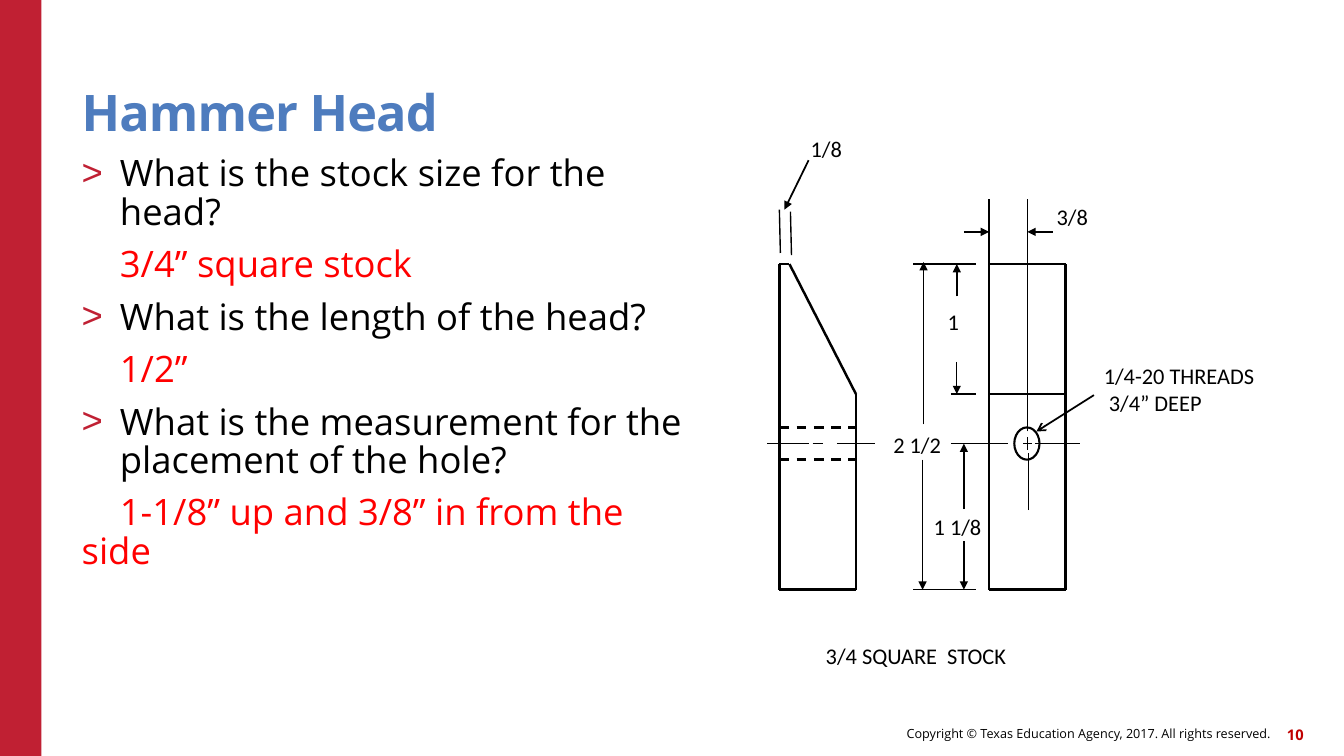
from dataclasses import dataclass

from lxml.etree import SubElement
from pptx import Presentation
from pptx.dml.color import RGBColor
from pptx.enum.dml import MSO_LINE_DASH_STYLE as Dash
from pptx.enum.shapes import MSO_CONNECTOR as Link, MSO_SHAPE as Shape
from pptx.enum.text import MSO_ANCHOR as Anchor, MSO_AUTO_SIZE as Fit, PP_ALIGN as Align
from pptx.oxml.ns import qn
from pptx.util import Pt

BLACK = RGBColor(0x00, 0x00, 0x00)
RED = RGBColor(0xFF, 0x00, 0x00)
CRIMSON = RGBColor(0xC0, 0x20, 0x33)
MAROON = RGBColor(0xC0, 0x00, 0x00)
BLUE = RGBColor(0x4E, 0x7C, 0xBE)
SANS = "Open Sans"
HAND = "Calibri"
SCALE = 9144  # EMU in a px, 100 px to the inch
INDENT = 38


@dataclass(frozen=True)
class Pen:
    width: float
    dash: bool = False
    head: str = ""


@dataclass(frozen=True)
class Label:
    x: int
    y: int
    w: int
    h: int
    text: str


@dataclass(frozen=True)
class Item:
    ask: str
    reply: str


EDGE = Pen(1.75)
HIDDEN = Pen(1.75, dash=True)
THIN = Pen(1)
ARROW = Pen(1.25, head="triangle")
FINE = Pen(0.75, head="triangle")
LEADER = Pen(1.25, head="arrow")

# Shared levels and sides of the two views
TOP, BEND, HOLE, BASE = 262, 391, 440, 585
LEFT, TIP, BACK = 773, 783, 849
NEAR, MID, FAR = 981, 1019, 1057

STROKES: dict[Pen, list[tuple[int, int, int, int]]] = {
    EDGE: [
        (LEFT, BASE, BACK, BASE), (BACK, BASE, BACK, BEND),
        (LEFT, BASE, LEFT, TOP), (LEFT, TOP, TIP, TOP), (TIP, TOP, BACK, BEND),
        (NEAR, BASE, FAR, BASE), (FAR, BASE, FAR, TOP),
        (NEAR, TOP, FAR, TOP), (NEAR, BASE, NEAR, TOP), (NEAR, BEND, FAR, BEND),
    ],
    HIDDEN: [(LEFT, HOLE + dy, BACK, HOLE + dy) for dy in (-16, 16)],
    THIN: [
        (1015, HOLE, 1024, HOLE), (MID, 446, MID, 434),
        (943, HOLE, 1000, HOLE), (1027, HOLE, 1071, HOLE),
        (806, HOLE, 816, HOLE), (802, HOLE, 761, HOLE), (830, HOLE, 868, HOLE),
        (1020, 506, 1020, 449), (MID, 428, MID, 197), (NEAR, TOP, NEAR, 197),
        (906, BASE, 968, BASE), (906, TOP, 968, TOP), (943, BEND, 968, BEND),
        (774, 251, 773, 208), (785, 253, 784, 210),
    ],
    ARROW: [
        (916, 421, 916, 260), (915, 456, 915, BASE),
        (956, 537, 956, BASE), (956, 505, 956, HOLE),
        (956, 230, NEAR, 230), (1044, 230, MID, 230),
        (949, 294, 949, TOP), (802, 159, 778, 208),
    ],
    FINE: [(949, 359, 949, BEND)],
    LEADER: [(1085, 392, 1028, 428)],
}

LABELS = [
    Label(815, 633, 256, 35, "3/4 SQUARE  STOCK"),
    Label(882, 424, 67, 87, "2 1/2"),
    Label(922, 505, 69, 57, "1 1/8"),
    Label(936, 302, 54, 52, "1"),
    Label(1044, 197, 67, 52, "3/8"),
    Label(800, 130, 67, 52, "1/8"),
]

ITEMS = [
    Item("What is the stock size for the head?", "3/4” square stock"),
    Item("What is the length of the head?", "1/2”"),
    Item("What is the measurement for the placement of the hole?",
         "1-1/8” up and 3/8” in from the side"),
]


def px(n: int) -> int:
    return n * SCALE


def place(shape, x: int, y: int, w: int, h: int) -> None:
    shape.left, shape.top, shape.width, shape.height = map(px, (x, y, w, h))


def setup(frame, inset: int, anchor=Anchor.TOP) -> None:
    frame.word_wrap = True
    frame.auto_size = Fit.NONE
    frame.vertical_anchor = anchor
    frame.margin_left = frame.margin_right = px(inset)
    frame.margin_top = frame.margin_bottom = px(inset)


def write(para, text: str, size: float, color: RGBColor, face: str, bold: bool = False):
    run = para.add_run()
    run.text = text
    font = run.font
    font.size, font.name, font.bold = Pt(size), face, bold
    font.color.rgb = color
    return run


def text_box(slide, spot: Label, inset: int, anchor=Anchor.TOP):
    """Add an empty text box at the label's place and return its first paragraph."""
    box = slide.shapes.add_textbox(*map(px, (spot.x, spot.y, spot.w, spot.h)))
    setup(box.text_frame, inset, anchor)
    return box.text_frame.paragraphs[0]


def bullet(para, mark: str) -> None:
    """Hang the paragraph from a mark, or indent only its first line if none."""
    props = para._p.get_or_add_pPr()
    props.set("marL", str(px(INDENT if mark else 0)))
    props.set("indent", str(px(-INDENT if mark else INDENT)))
    if mark:
        tint = SubElement(props, qn("a:buClr"))
        SubElement(tint, qn("a:srgbClr")).set("val", str(CRIMSON))
        SubElement(props, qn("a:buChar")).set("char", mark)
    else:
        SubElement(props, qn("a:buNone"))


def stroke(slide, pen: Pen, ends: tuple[int, int, int, int]) -> None:
    wire = slide.shapes.add_connector(Link.STRAIGHT, *map(px, ends))
    wire.line.width = Pt(pen.width)
    wire.line.color.rgb = BLACK
    if pen.dash:
        wire.line.dash_style = Dash.DASH
    if pen.head:
        SubElement(wire.line._get_or_add_ln(), qn("a:tailEnd")).set("type", pen.head)
    SubElement(wire._element.spPr, qn("a:effectLst"))


def add_frame(slide) -> None:
    """Add the side band, the copyright line and the page number."""
    band = slide.shapes.add_shape(Shape.RECTANGLE, 0, 0, px(41), px(750))
    band.shadow.inherit = False
    band.fill.solid()
    band.fill.fore_color.rgb = CRIMSON
    band.line.fill.background()
    notice = Label(614, 712, 646, 32,
                   "Copyright © Texas Education Agency, 2017. All rights reserved.")
    number = Label(1251, 713, 42, 32, "10")
    for spot, size, color, bold in ((notice, 9, BLACK, False), (number, 10.5, MAROON, True)):
        para = text_box(slide, spot, 0, Anchor.MIDDLE)
        para.alignment = Align.RIGHT
        write(para, spot.text, size, color, SANS, bold)


def add_words(slide) -> None:
    """Fill the title and the list of questions and answers."""
    title, body = slide.shapes.title, slide.placeholders[1]
    place(title, 81, 45, 1100, 96)
    setup(title.text_frame, 0, Anchor.BOTTOM)
    para = title.text_frame.paragraphs[0]
    para.alignment = Align.LEFT
    para.line_spacing = 0.9
    run = write(para, "Hammer Head", 36, BLUE, SANS, True)
    run._r.get_or_add_rPr().set("spc", "-60")

    place(body, 81, 155, 605, 518)
    frame = body.text_frame
    setup(frame, 0)
    rows = [row for item in ITEMS
            for row in ((item.ask, ">", BLACK), (item.reply, "", RED))]
    for i, (text, mark, color) in enumerate(rows):
        para = frame.add_paragraph() if i else frame.paragraphs[0]
        bullet(para, mark)
        para.line_spacing = 0.88
        para.space_before = Pt(10 if i else 0)
        write(para, text, 26, color, SANS)


def add_plan(slide) -> None:
    """Draw the side and front views with their dimensions."""
    for pen, lines in STROKES.items():
        for ends in lines:
            stroke(slide, pen, ends)
    hole = slide.shapes.add_shape(Shape.OVAL, *map(px, (1006, HOLE - 16, 25, 32)))
    hole.shadow.inherit = False
    hole.fill.background()
    hole.line.color.rgb = BLACK
    hole.line.width = Pt(1.5)
    for spot in LABELS:
        write(text_box(slide, spot, 4), spot.text, 16, BLACK, HAND)
    thread = Label(1085, 354, 214, 75, "1/4-20 THREADS")
    para = text_box(slide, thread, 10)
    para._p.getparent().bodyPr.set("tIns", str(px(5)))
    write(para, thread.text, 16, BLACK, HAND)
    depth = slide.shapes[-1].text_frame.add_paragraph()
    depth._p.get_or_add_pPr().set("marL", str(px(5)))
    write(depth, "3/4” DEEP", 16, BLACK, HAND)


def main() -> None:
    deck = Presentation()
    deck.slide_width, deck.slide_height = px(1333), px(750)
    slide = deck.slides.add_slide(deck.slide_layouts[1])
    add_frame(slide)
    add_words(slide)
    add_plan(slide)
    deck.save("out.pptx")


if __name__ == "__main__":
    main()
